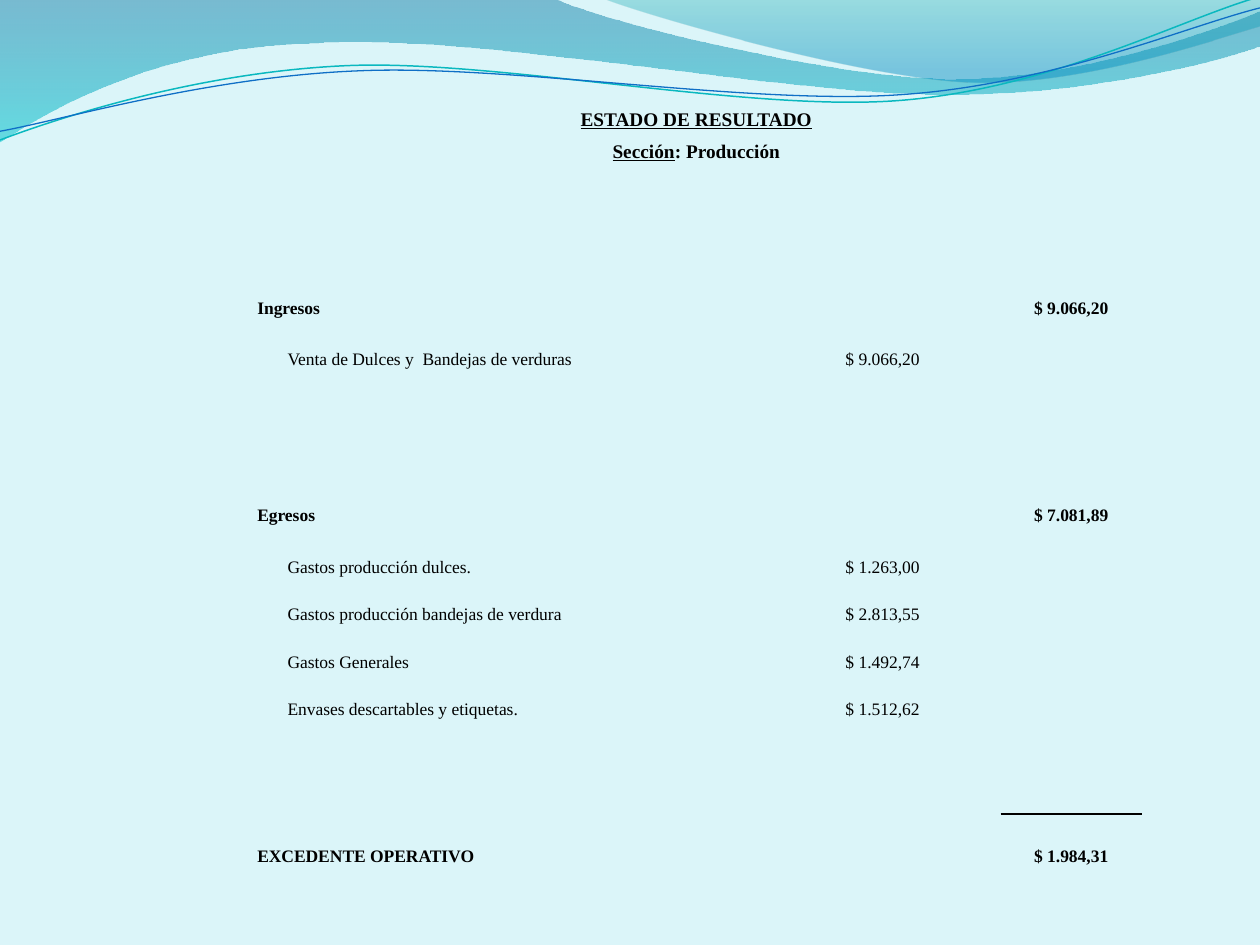
import math
from dataclasses import dataclass
from typing import Optional

from lxml import etree
from pptx import Presentation
from pptx.dml.color import RGBColor
from pptx.enum import text
from pptx.oxml import ns
from pptx.util import Pt

BACKGROUND = RGBColor(0xDB, 0xF5, 0xF9)
BLACK = RGBColor(0, 0, 0)
DEEP_BLUE = RGBColor(0x00, 0x74, 0xA1)
AQUA = RGBColor(0x00, 0xC6, 0xCF)
TEAL = RGBColor(0x00, 0xA1, 0xA9)
SKY = RGBColor(0x00, 0x8B, 0xBF)
TEAL_LINE = RGBColor(0x0A, 0xB8, 0xBF)
BLUE_LINE = RGBColor(0x0F, 0x6F, 0xC6)
FONT = "Times New Roman"
NO_STYLE = "{2D5ABB26-0587-4C30-8999-92F81FD0307C}"
RIPPLE_ROTATION = 357.3
LEFT, CENTER, RIGHT = text.PP_ALIGN.LEFT, text.PP_ALIGN.CENTER, text.PP_ALIGN.RIGHT

Point = tuple[float, float]


@dataclass(frozen=True)
class Outline:
    """Segments hold one point for a straight line, three for a Bezier curve.

    The box (left, top, width, height) is the frame before rotation; the
    points are places on the slide after it.
    """
    box: tuple[float, float, float, float]
    start: Point
    segments: list[tuple[Point, ...]]
    rotation: float = 0


@dataclass(frozen=True)
class Stop:
    position: float
    color: RGBColor
    opacity: int


@dataclass(frozen=True)
class Wave:
    outline: Outline
    stops: tuple[Stop, Stop]


@dataclass(frozen=True)
class Ripple:
    outline: Outline
    color: RGBColor
    width: float


@dataclass(frozen=True)
class Entry:
    row: int
    label: str
    amount: str
    last_label_column: int
    is_total: bool = False
    space_before: Optional[float] = None


WAVES = [
    Wave(Outline((-0.7, -0.7, 721.5, 82.2), (0, 0), [
        ((317, -0.7),),
        ((343, 12), (478, 45), (546, 45)),
        ((614, 45), (690, 19), (720, 6.5)),
        ((720.8, 26),),
        ((708, 32), (626, 55), (537, 54)),
        ((448, 54), (275, 20), (185, 24.5)),
        ((93, 26), (33, 60), (-0.7, 81.5)),
        ((0, 0),),
    ]), (Stop(0, DEEP_BLUE, 45), Stop(1, AQUA, 55))),
    Wave(Outline((345, -0.7, 375, 50.4), (345, -0.7), [
        ((366, 8), (491, 44.5), (554, 47)),
        ((616, 49.5), (692, 23), (720, 15)),
        ((720, 0),),
        ((345, -0.7),),
    ]), (Stop(0, TEAL, 30), Stop(0.8, SKY, 45))),
]
RIPPLES = [
    Ripple(Outline((-1.4, 15.8, 721.4, 51.1), (0, 80), [
        ((34.5, 67), (114, 41), (199, 37.5)),
        ((284, 34), (427, 64), (513, 57.5)),
        ((600, 51), (675, 11), (718.5, -1.5)),
    ], RIPPLE_ROTATION), TEAL_LINE, 0.85),
    Ripple(Outline((-1.4, 21.6, 722.2, 41.8), (0, 75), [
        ((34, 69), (118, 44), (204, 40.5)),
        ((290, 36.5), (430, 60.5), (516, 54)),
        ((602, 48), (678, 15), (720, 4.5)),
    ], RIPPLE_ROTATION), BLUE_LINE, 0.75),
]

COLUMN_WIDTHS = [17.3, 154.8, 42.5, 10.1, 30.2, 52.6, 78.2, 42.8, 80.6]
ROW_HEIGHTS = [59] + [29.65] * 8 + [27.1] * 5 + [29.5]
DETAIL_COLUMN, TOTAL_COLUMN = 6, 8
RESULT_ROW = 14
ENTRIES = [
    Entry(3, "Ingresos", "$ 9.066,20", 1, is_total=True),
    Entry(4, "Venta de Dulces y  Bandejas de verduras", "$ 9.066,20", 4),
    Entry(7, "Egresos", "$ 7.081,89", 1, is_total=True),
    Entry(8, "Gastos producción dulces.", "$ 1.263,00", 4),
    Entry(9, "Gastos producción bandejas de verdura", "$ 2.813,55", 4),
    Entry(10, "Gastos Generales", "$ 1.492,74", 1),
    Entry(11, "Envases descartables y etiquetas.", "$ 1.512,62", 4),
    Entry(RESULT_ROW, "EXCEDENTE OPERATIVO", "$ 1.984,31", 4, is_total=True, space_before=6),
]
# (row, first column, last column)
EMPTY_SPANS = [(5, 0, 1), (10, 2, 4), (12, 1, 4), (13, 1, 4)]


def to_frame(outline: Outline, point: Point) -> Point:
    """Undo the rotation and measure a point from the frame's corner."""
    left, top, width, height = outline.box
    angle = math.radians(-outline.rotation)
    dx, dy = point[0] - left - width / 2, point[1] - top - height / 2
    return (width / 2 + dx * math.cos(angle) - dy * math.sin(angle),
            height / 2 + dx * math.sin(angle) + dy * math.cos(angle))


def draw_outline(slide, outline: Outline, close: bool):
    """Build a freeform whose path keeps its Bezier curves."""
    builder = slide.shapes.build_freeform(0, 0)
    builder.add_line_segments([(Pt(outline.box[2]), Pt(outline.box[3]))], close=False)
    shape = builder.convert_to_shape()
    shape.shadow.inherit = False
    shape.left, shape.top, shape.width, shape.height = map(Pt, outline.box)
    shape.rotation = outline.rotation
    curve = shape._element.spPr.xpath(".//a:path")[0]
    for step in list(curve):
        curve.remove(step)
    steps = [("moveTo", (outline.start,))]
    steps += [("lnTo" if len(s) == 1 else "cubicBezTo", s) for s in outline.segments]
    for tag, points in steps:
        step = etree.SubElement(curve, ns.qn(f"a:{tag}"))
        for point in points:
            x, y = to_frame(outline, point)
            etree.SubElement(step, ns.qn("a:pt"), x=str(int(Pt(x))), y=str(int(Pt(y))))
    if close:
        etree.SubElement(curve, ns.qn("a:close"))
    return shape


def draw_wave(slide, wave: Wave) -> None:
    shape = draw_outline(slide, wave.outline, close=True)
    shape.line.fill.background()
    shape.fill.gradient()
    shape.fill.gradient_angle = 270
    for target, stop in zip(shape.fill.gradient_stops, wave.stops):
        target.position = stop.position
        target.color.rgb = stop.color
    colors = shape._element.spPr.xpath(".//a:gs/a:srgbClr")
    for color, stop in zip(colors, wave.stops):
        etree.SubElement(color, ns.qn("a:alpha"), val=str(stop.opacity * 1000))


def draw_ripple(slide, ripple: Ripple) -> None:
    shape = draw_outline(slide, ripple.outline, close=False)
    shape.fill.background()
    shape.line.color.rgb = ripple.color
    shape.line.width = Pt(ripple.width)


def format_run(run, size: float, bold: bool, underline: Optional[bool] = None) -> None:
    run.font.name, run.font.size = FONT, Pt(size)
    run.font.bold, run.font.underline = bold, underline
    run.font.color.rgb = BLACK


def write_cell(cell, content: str, align, size: float, bold: bool,
               space_before: Optional[float] = None, underline: Optional[bool] = None) -> None:
    cell.text_frame.text = content
    for paragraph in cell.text_frame.paragraphs:
        paragraph.alignment, paragraph.line_spacing = align, 1.5
        if space_before is not None:
            paragraph.space_before = Pt(space_before)
        for run in paragraph.runs:
            format_run(run, size, bold, underline)


def add_border(cell, side: str) -> None:
    border = etree.Element(ns.qn(f"a:ln{side}"), w=str(int(Pt(1))))
    fill = etree.SubElement(border, ns.qn("a:solidFill"))
    etree.SubElement(fill, ns.qn("a:srgbClr"), val=str(BLACK))
    cell._tc.get_or_add_tcPr().insert(0, border)


def draw_statement(slide) -> None:
    table = slide.shapes.add_table(len(ROW_HEIGHTS), len(COLUMN_WIDTHS), Pt(143.4), Pt(33.8),
                                   Pt(sum(COLUMN_WIDTHS)), Pt(sum(ROW_HEIGHTS))).table
    table.first_row = table.horz_banding = False
    table._tbl.xpath(".//a:tableStyleId")[0].text = NO_STYLE
    for column, width in zip(table.columns, COLUMN_WIDTHS):
        column.width = Pt(width)
    for row, height in zip(table.rows, ROW_HEIGHTS):
        row.height = Pt(height)
    for cell in table.iter_cells():
        cell.margin_left = cell.margin_right = Pt(3.6)
        cell.margin_top = cell.margin_bottom = 0
        cell.vertical_anchor = text.MSO_ANCHOR.BOTTOM
        cell.fill.background()

    heading = table.cell(0, 0)
    heading.merge(table.cell(0, len(COLUMN_WIDTHS) - 1))
    write_cell(heading, "ESTADO DE RESULTADO\nSección", CENTER, 11, True, underline=True)
    section_name = heading.text_frame.paragraphs[1].add_run()
    section_name.text = ": Producción"
    format_run(section_name, 11, True)

    for row, first, last in EMPTY_SPANS:
        table.cell(row, first).merge(table.cell(row, last))
    for entry in ENTRIES:
        label_column = 0 if entry.is_total else 1
        label = table.cell(entry.row, label_column)
        if entry.last_label_column > label_column:
            label.merge(table.cell(entry.row, entry.last_label_column))
        amount = table.cell(entry.row, TOTAL_COLUMN if entry.is_total else DETAIL_COLUMN)
        amount_align = CENTER if entry.is_total else RIGHT
        write_cell(label, entry.label, LEFT, 10, entry.is_total, entry.space_before)
        write_cell(amount, entry.amount, amount_align, 10, entry.is_total, entry.space_before)
    add_border(table.cell(RESULT_ROW - 1, TOTAL_COLUMN), "B")
    add_border(table.cell(RESULT_ROW, TOTAL_COLUMN), "T")


def main() -> None:
    deck = Presentation()
    deck.slide_width, deck.slide_height = Pt(720), Pt(540)
    slide = deck.slides.add_slide(deck.slide_layouts[6])
    slide.background.fill.solid()
    slide.background.fill.fore_color.rgb = BACKGROUND
    for wave in WAVES:
        draw_wave(slide, wave)
    for ripple in RIPPLES:
        draw_ripple(slide, ripple)
    draw_statement(slide)
    deck.save("out.pptx")


if __name__ == "__main__":
    main()
